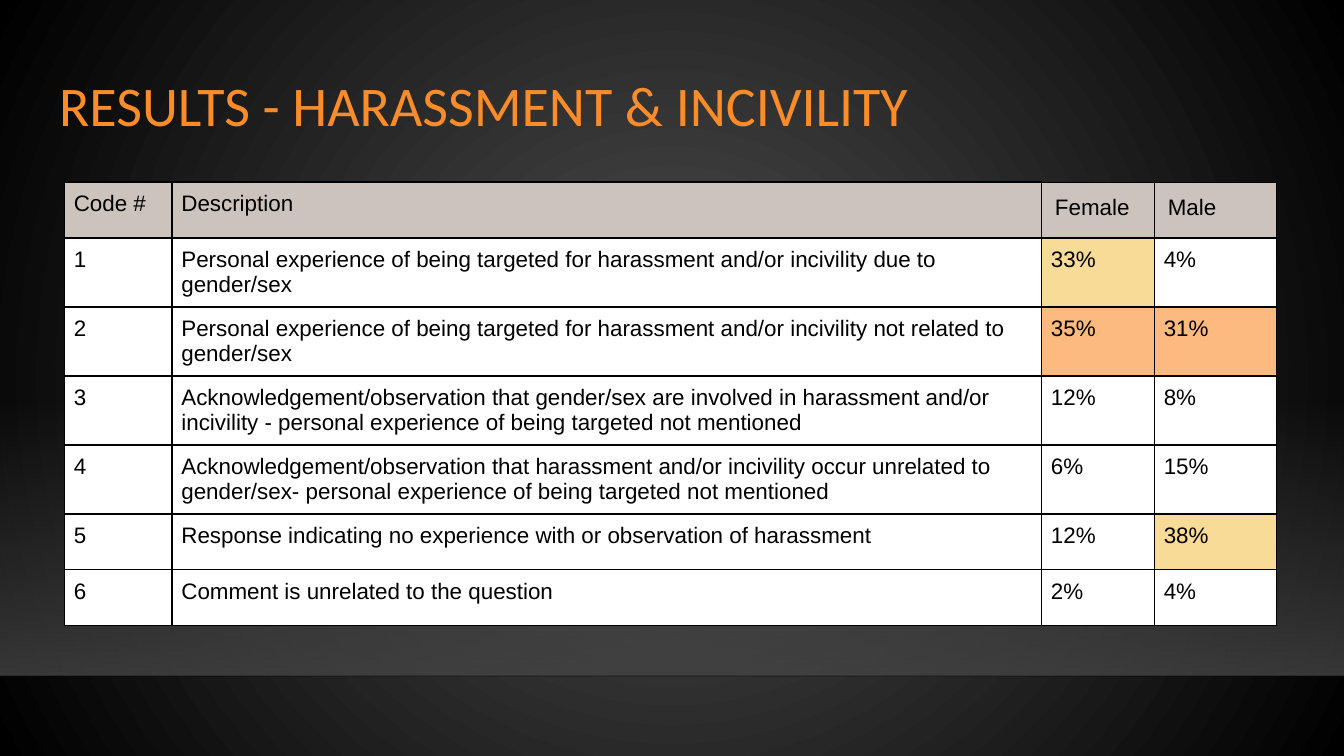
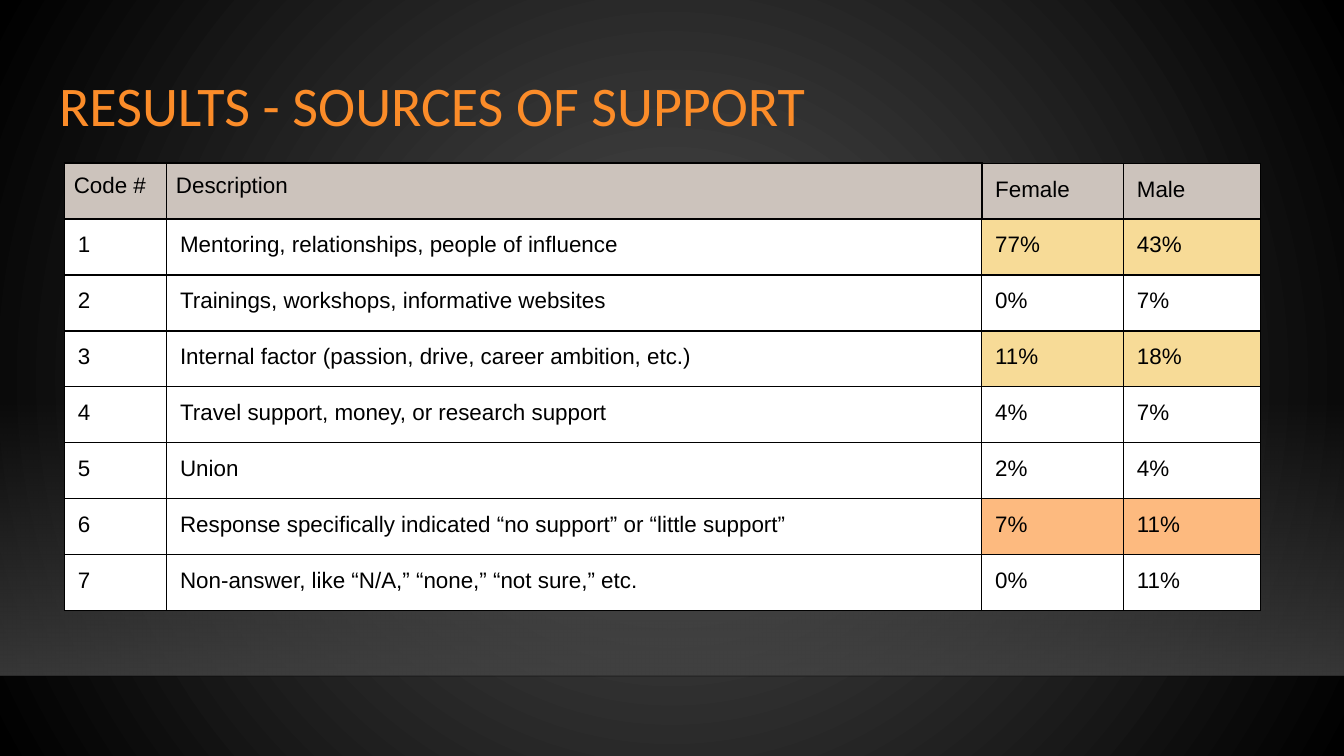
from lxml import etree
from pptx import Presentation
from pptx import util as u
from pptx.dml.color import RGBColor
from pptx.enum import shapes, text
from pptx.oxml import parse_xml
from pptx.oxml.ns import nsdecls, qn

HUES = {
    "core": "505050", "edge": "000000", "band": "454545", "rule": "000001",
    "title": "FB8C29", "ink": "000000", "head": "CCC3BC", "plain": "FFFFFF",
    "gold": "F7DB97", "peach": "FDBA7F",
}
UNIT = 0.1
STEP = 4.16
THIN, THICK = 0.75, 1
TIGHT, LOOSE = 0.07, 0.1


def rgb(hue):
    return RGBColor.from_string(HUES[hue])


def blend(stops, shade):
    marks = "".join(
        f'<a:gs pos="{pos * 1000}"><a:srgbClr val="{HUES[hue]}">'
        f'<a:alpha val="{alpha * 1000}"/></a:srgbClr></a:gs>'
        for pos, hue, alpha in stops)
    return parse_xml(f'<a:gradFill {nsdecls("a")} rotWithShape="1">'
                     f'<a:gsLst>{marks}</a:gsLst>{shade}</a:gradFill>')


def swap(root, fill):
    old = root.find(qn("a:solidFill"))
    root.replace(old, fill)


class Deck:
    def __init__(self):
        self.prs = Presentation()
        self.prs.slide_width = u.Inches(10)
        self.prs.slide_height = u.Inches(10 * 9 / 16)
        self.slide = None
        self.glow()

    def grid(self, *spans):
        return [u.Inches(span * UNIT) for span in spans]

    def glow(self):
        master = self.prs.slide_master
        master.background.fill.solid()
        shade = ('<a:path path="circle"><a:fillToRect l="50000" t="50000" '
                 'r="50000" b="50000"/></a:path>')
        swap(master.element.find(".//" + qn("p:bgPr")),
             blend([(0, "core", 100), (100, "edge", 100)], shade))

    def page(self, title):
        self.slide = self.prs.slides.add_slide(self.prs.slide_layouts[5])
        self.band()
        self.rule()
        self.title(title)

    def sink(self, shape, place):
        shape.element.getparent().insert(place, shape.element)

    def band(self):
        box = self.slide.shapes.add_shape(
            shapes.MSO_SHAPE.RECTANGLE, *self.grid(0, 29.7, 100, 20.6))
        box.shadow.inherit = False
        box.line.fill.background()
        box.fill.solid()
        swap(box.element.spPr,
             blend([(0, "band", 0), (100, "band", 80)], '<a:lin ang="5400000" scaled="0"/>'))
        self.sink(box, 2)

    def rule(self):
        line = self.slide.shapes.add_connector(
            shapes.MSO_CONNECTOR.STRAIGHT, *self.grid(0, 50.3, 100, 50.3))
        line.line.width = u.Pt(1)
        line.line.color.rgb = rgb("rule")
        props = line.element.spPr
        tint = props.find(".//" + qn("a:srgbClr"))
        etree.SubElement(tint, qn("a:alpha"), val="20000")
        etree.SubElement(props, qn("a:effectLst"))
        self.sink(line, 3)

    def title(self, words):
        box = self.slide.shapes.title
        box.left, box.top, box.width, box.height = self.grid(3.4, 4.93, 93.2, 6.3)
        frame = box.text_frame
        frame.text = words
        frame.word_wrap = True
        frame.auto_size = text.MSO_AUTO_SIZE.NONE
        frame.vertical_anchor = text.MSO_ANCHOR.MIDDLE
        self.inset(frame, LOOSE)
        para = frame.paragraphs[0]
        para.alignment = text.PP_ALIGN.LEFT
        para.line_spacing = 0.9
        self.font(para, "Calibri", 30, "title")

    def inset(self, item, pad):
        for side in ("left", "top", "right", "bottom"):
            setattr(item, f"margin_{side}", u.Inches(pad))

    def font(self, para, name, size, hue):
        para.font.name = name
        para.font.size = u.Pt(size)
        para.font.bold = False
        para.font.color.rgb = rgb(hue)

    def border(self, cell, widths):
        props = cell._tc.get_or_add_tcPr()
        for place, (side, width) in enumerate(zip("LRTB", widths)):
            props.insert(place, parse_xml(
                f'<a:ln{side} {nsdecls("a")} w="{u.Pt(width)}"><a:solidFill>'
                f'<a:srgbClr val="{HUES["ink"]}"/></a:solidFill></a:ln{side}>'))

    def edges(self, row, col, width):
        if row == 0:
            if col < 2:
                return [THICK] * 4
            return [THICK if col == 2 else THIN, THIN, THIN, THICK]
        return [width, width, THICK if row == 1 else width, width]

    def table(self, left, top, cols, rows, marks, pad, width):
        rows = [("Code #", "Description", "Female", "Male")] + [
            (str(code), *row) for code, row in enumerate(rows, 1)]
        table = self.slide.shapes.add_table(
            len(rows), len(cols),
            *self.grid(left, top, sum(cols), STEP * len(rows))).table
        table.first_row = table.horz_banding = False
        for col, span in zip(table.columns, self.grid(*cols)):
            col.width = span
        for r, row in enumerate(rows):
            table.rows[r].height = self.grid(STEP)[0]
            for c, words in enumerate(row):
                cell = table.cell(r, c)
                cell.text = words
                self.font(cell.text_frame.paragraphs[0], "Arial", 12, "ink")
                cell.fill.solid()
                cell.fill.fore_color.rgb = rgb(
                    marks.get((r, c), "plain") if r else "head")
                self.inset(cell, pad if r else TIGHT if c < 2 else LOOSE)
                self.border(cell, self.edges(r, c, width))


def main():
    deck = Deck()
    deck.page("RESULTS - HARASSMENT & INCIVILITY")
    deck.table(4.8, 13.55, (8, 64.7, 8.4, 9.1), [
        ("Personal experience of being targeted for harassment and/or "
         "incivility due to gender/sex", "33%", "4%"),
        ("Personal experience of being targeted for harassment and/or "
         "incivility not related to gender/sex", "35%", "31%"),
        ("Acknowledgement/observation that gender/sex are involved in "
         "harassment and/or incivility - personal experience of being "
         "targeted not mentioned", "12%", "8%"),
        ("Acknowledgement/observation that harassment and/or incivility "
         "occur unrelated to gender/sex- personal experience of being "
         "targeted not mentioned", "6%", "15%"),
        ("Response indicating no experience with or observation of "
         "harassment", "12%", "38%"),
        ("Comment is unrelated to the question", "2%", "4%"),
    ], {(1, 2): "gold", (2, 2): "peach", (2, 3): "peach", (5, 3): "gold"},
        TIGHT, THICK)

    deck.page("RESULTS - SOURCES OF SUPPORT")
    tints = {1: "gold", 3: "gold", 6: "peach"}
    deck.table(4.8, 12.15, (7.6, 60.65, 10.55, 10.2), [
        ("Mentoring, relationships, people of influence", "77%", "43%"),
        ("Trainings, workshops, informative websites", "0%", "7%"),
        ("Internal factor (passion, drive, career ambition, etc.)", "11%", "18%"),
        ("Travel support, money, or research support", "4%", "7%"),
        ("Union", "2%", "4%"),
        ("Response specifically indicated “no support” or “little support”",
         "7%", "11%"),
        ("Non-answer, like “N/A,” “none,” “not sure,” etc.", "0%", "11%"),
    ], {(r, c): hue for r, hue in tints.items() for c in (2, 3)},
        LOOSE, THIN)
    deck.prs.save("out.pptx")


if __name__ == "__main__":
    main()
